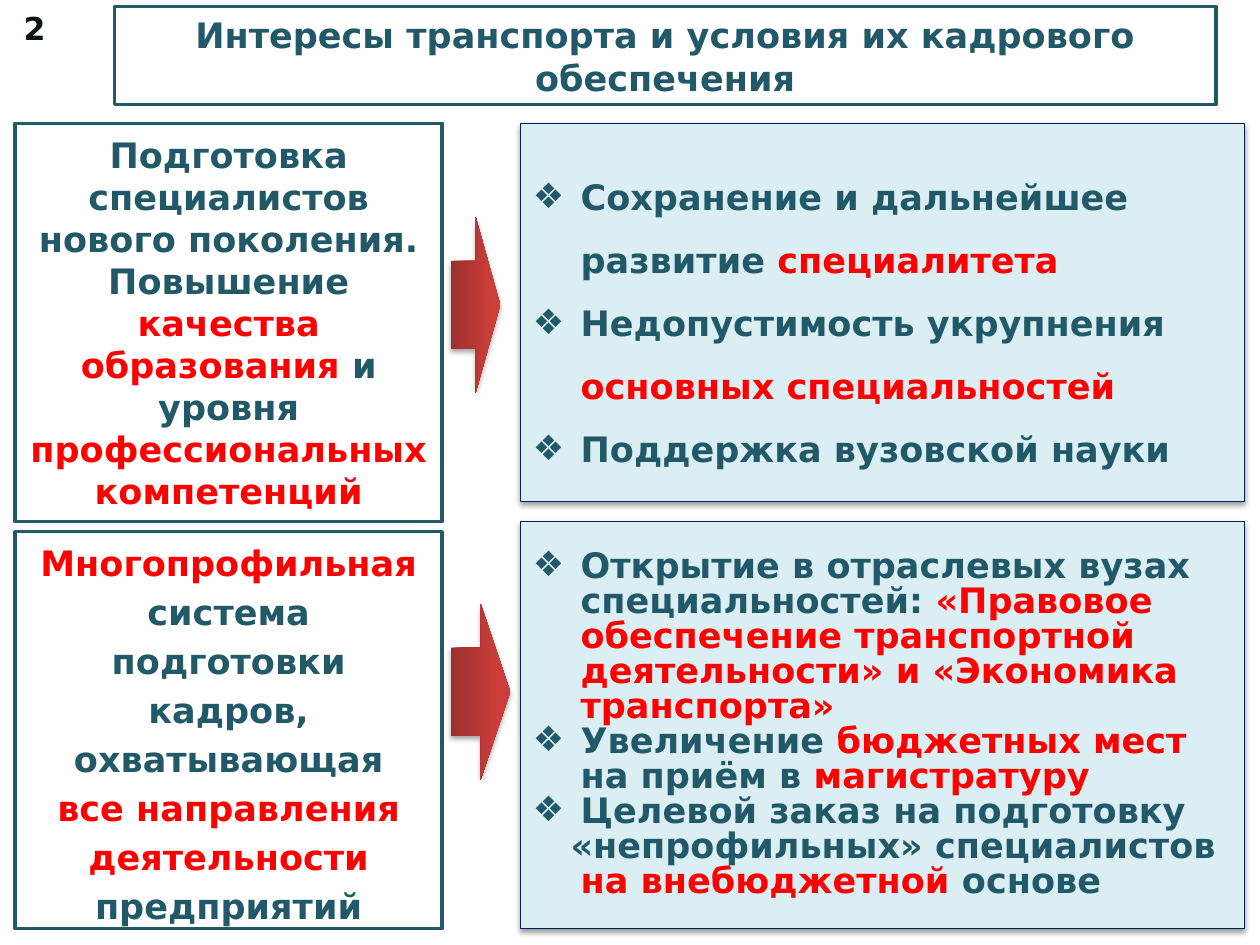
from lxml import etree
from pptx import Presentation
from pptx import util as u
from pptx.dml.color import RGBColor
from pptx.enum import shapes, text
from pptx.oxml import ns

TEAL = RGBColor(0x21, 0x59, 0x68)
RED = RGBColor(0xFF, 0x00, 0x00)
WHITE = RGBColor(0xFF, 0xFF, 0xFF)
PALE_BLUE = RGBColor(0xDB, 0xEE, 0xF4)
NAVY = RGBColor(0x00, 0x20, 0x60)
DARK_RED = RGBColor(0x9C, 0x2F, 0x2D)
BRIGHT_RED = RGBColor(0xCB, 0x3E, 0x3A)
NEAR_BLACK = RGBColor(0x07, 0x12, 0x15)
BULLET = "❖"
INDENT = 0.38


class SlideBuilder:
    """Holds the style and the current slide; red words stand between asterisks."""

    font = "DejaVu Sans"
    size = u.Pt(20)

    def __init__(self, slide):
        self.slide = slide

    def format_run(self, run, color, size=None):
        run.font.name = self.font
        run.font.size = size or self.size
        run.font.bold = True
        run.font.color.rgb = color

    def add_runs(self, paragraph, marked_text):
        for index, part in enumerate(marked_text.split("*")):
            if part:
                run = paragraph.add_run()
                run.text = part
                self.format_run(run, RED if index % 2 else TEAL)

    def shadow(self, shape, opacity, distance):
        shape.shadow.inherit = False
        effects = shape._element.spPr.find(ns.qn("a:effectLst"))
        outer = etree.SubElement(
            effects, ns.qn("a:outerShdw"), blurRad=str(u.Pt(3.1)),
            dist=str(u.Pt(distance)), dir="5400000", rotWithShape="0")
        color = etree.SubElement(outer, ns.qn("a:srgbClr"), val="000000")
        etree.SubElement(color, ns.qn("a:alpha"), val=str(opacity * 1000))

    def box(self, left, top, width, height, fill, line, line_width):
        shape = self.slide.shapes.add_shape(
            shapes.MSO_SHAPE.RECTANGLE, u.Inches(left), u.Inches(top),
            u.Inches(width), u.Inches(height))
        shape.shadow.inherit = False
        shape.fill.solid()
        shape.fill.fore_color.rgb = fill
        shape.line.color.rgb = line
        shape.line.width = u.Pt(line_width)
        shape.text_frame.word_wrap = True
        shape.text_frame.vertical_anchor = text.MSO_ANCHOR.MIDDLE
        return shape

    def paragraphs(self, shape, count, spacing, alignment):
        frame = shape.text_frame
        for _ in range(count - 1):
            frame.add_paragraph()
        for paragraph in frame.paragraphs:
            paragraph.alignment = alignment
            paragraph.line_spacing = spacing
        return frame.paragraphs

    def centred_box(self, left, top, width, height, lines, spacing):
        shape = self.box(left, top, width, height, WHITE, TEAL, 2)
        paragraphs = self.paragraphs(
            shape, len(lines), u.Pt(spacing), text.PP_ALIGN.CENTER)
        for paragraph, line in zip(paragraphs, lines):
            self.add_runs(paragraph, line)
        return shape

    def bullet_box(self, left, top, width, height, items, spacing):
        """Each item is (text, left indent, has a bullet)."""
        shape = self.box(left, top, width, height, PALE_BLUE, NAVY, 0.75)
        self.shadow(shape, 38, 1.6)
        paragraphs = self.paragraphs(
            shape, len(items), spacing, text.PP_ALIGN.LEFT)
        for paragraph, (line, indent, bulleted) in zip(paragraphs, items):
            properties = paragraph._p.get_or_add_pPr()
            properties.set("marL", str(u.Inches(indent)))
            if bulleted:
                properties.set("indent", str(-u.Inches(indent)))
                etree.SubElement(properties, ns.qn("a:buFont"), typeface=self.font)
                etree.SubElement(properties, ns.qn("a:buChar"), char=BULLET)
            self.add_runs(paragraph, line)

    def arrow(self, left, top, width, height):
        shape = self.slide.shapes.add_shape(
            shapes.MSO_SHAPE.RIGHT_ARROW, u.Inches(left), u.Inches(top),
            u.Inches(width), u.Inches(height))
        shape.fill.gradient()
        shape.fill.gradient_angle = 0
        stops = zip(shape.fill.gradient_stops, (DARK_RED, BRIGHT_RED), (0, 0.8))
        for stop, color, position in stops:
            stop.color.rgb = color
            stop.position = position
        shape.line.fill.background()
        self.shadow(shape, 35, 1.8)

    def page_number(self, left, top, width, height, number):
        shape = self.slide.shapes.add_textbox(
            u.Inches(left), u.Inches(top), u.Inches(width), u.Inches(height))
        frame = shape.text_frame
        frame.word_wrap = False
        frame.vertical_anchor = text.MSO_ANCHOR.MIDDLE
        frame.text = number
        paragraph = frame.paragraphs[0]
        paragraph.alignment = text.PP_ALIGN.CENTER
        self.format_run(paragraph.runs[0], NEAR_BLACK, u.Pt(18))


def main():
    presentation = Presentation()
    presentation.slide_width = u.Inches(10)
    presentation.slide_height = u.Inches(7.5)
    builder = SlideBuilder(
        presentation.slides.add_slide(presentation.slide_layouts[6]))

    # Title
    title = builder.centred_box(0.91, 0.05, 8.74, 0.78, [
        "Интересы транспорта и условия их кадрового",
        "обеспечения",
    ], 24.8)
    frame = title.text_frame
    frame.margin_left = frame.margin_right = u.Inches(0.06)
    frame.margin_top = frame.margin_bottom = u.Inches(0.03)

    # Upper row: quality of training
    builder.centred_box(0.12, 0.98, 3.39, 3.16, [
        "Подготовка",
        "специалистов нового поколения.",
        "Повышение *качества*",
        "*образования *и уровня",
        "*профессиональных*",
        "*компетенций*",
    ], 24)
    builder.bullet_box(4.13, 0.98, 5.75, 3, [
        ("Сохранение и дальнейшее развитие *специалитета*", INDENT, True),
        ("Недопустимость укрупнения", INDENT, True),
        ("*основных специальностей*", INDENT, False),
        ("Поддержка вузовской науки", INDENT, True),
    ], 1.5)
    builder.arrow(3.58, 1.72, 0.39, 1.4)

    # Lower row: breadth of training
    builder.centred_box(0.12, 4.22, 3.39, 3.15, [
        "*Многопрофильная*",
        "система подготовки",
        "кадров, охватывающая",
        "*все направления*",
        "*деятельности*",
        "предприятий",
    ], 28)
    builder.bullet_box(4.13, 4.14, 5.75, 3.23, [
        ("Открытие в отраслевых вузах специальностей: *«Правовое обеспечение "
         "транспортной деятельности» и «Экономика транспорта»*", INDENT, True),
        ("Увеличение *бюджетных мест*", INDENT, True),
        ("на приём в *магистратуру*", INDENT, False),
        ("Целевой заказ на подготовку", INDENT, True),
        ("«непрофильных» специалистов", 0.3, False),
        ("*на внебюджетной *основе", INDENT, False),
    ], u.Pt(20))
    builder.arrow(3.58, 4.79, 0.47, 1.4)

    # Page number
    builder.page_number(0.04, 0.03, 0.47, 0.38, "2")

    presentation.save("out.pptx")


if __name__ == "__main__":
    main()
